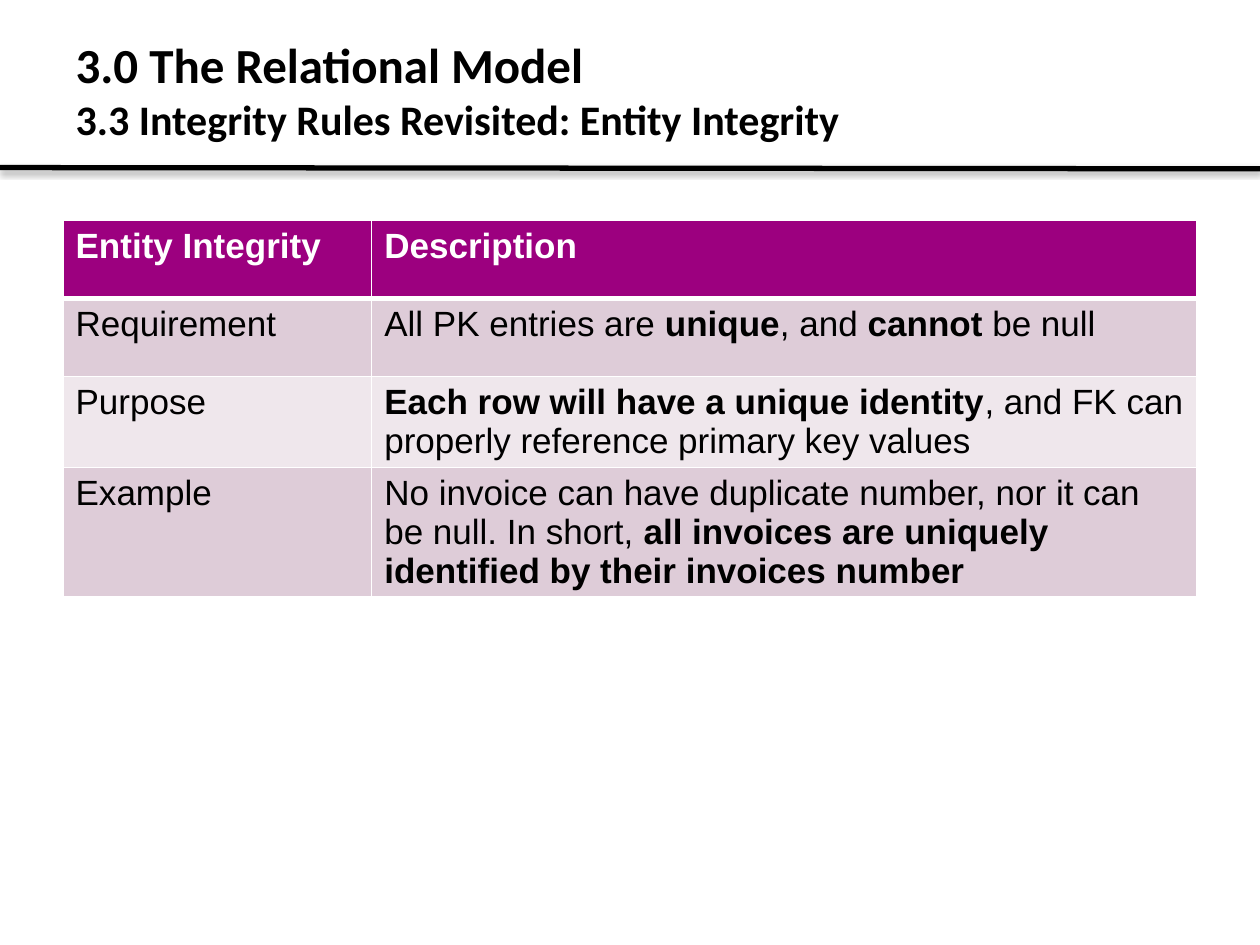
from lxml.etree import SubElement
from pptx import Presentation
from pptx.dml.color import RGBColor
from pptx.enum.shapes import MSO_CONNECTOR
from pptx.enum.text import MSO_ANCHOR, PP_ALIGN
from pptx.oxml.ns import qn
from pptx.util import Inches, Pt

BLACK = RGBColor(0x00, 0x00, 0x00)
WHITE = RGBColor(0xFF, 0xFF, 0xFF)
PURPLE = RGBColor(0x9C, 0x00, 0x7F)
BAND_DARK = RGBColor(0xDE, 0xCC, 0xD8)
BAND_LIGHT = RGBColor(0xEF, 0xE7, 0xEC)

ROWS = [
    ("Entity Integrity", "Description"),
    ("Requirement", "All PK entries are **unique**, and **cannot** be null"),
    ("Purpose", "**Each row will have a unique identity**, and FK can "
                "properly reference primary key values"),
    ("Example", "No invoice can have duplicate number, nor it can be null. In short, "
                "**all invoices are uniquely identified by their invoices number**"),
]


def add_text(p, text, *, size, font, color=BLACK, bold=False):
    for i, part in enumerate(text.split("**")):
        if part:
            r = p.add_run()
            r.text = part
            r.font.size = Pt(size)
            r.font.name = font
            r.font.bold = bold or i % 2 == 1
            r.font.color.rgb = color


class SlideBuilder:
    title_font = "Calibri"
    body_font = "Arial"
    body_size = 20

    def __init__(self, prs):
        self.s = prs.slides.add_slide(prs.slide_layouts[5])

    def title(self, heading, subheading, left, top, width, height):
        sp = self.s.shapes.title
        sp.left, sp.top = Inches(left), Inches(top)
        sp.width, sp.height = Inches(width), Inches(height)
        tf = sp.text_frame
        tf.word_wrap = True
        tf.vertical_anchor = MSO_ANCHOR.MIDDLE
        p = tf.paragraphs[0]
        p.alignment = PP_ALIGN.LEFT
        add_text(p, heading, size=28, font=self.title_font, bold=True)
        p.add_line_break()
        add_text(p, subheading, size=24, font=self.title_font, bold=True)

    def rule(self, x1, y1, x2, y2):
        line = self.s.shapes.add_connector(
            MSO_CONNECTOR.STRAIGHT, Inches(x1), Inches(y1), Inches(x2), Inches(y2))
        line.line.color.rgb = BLACK
        line.line.width = Pt(3)
        effects = SubElement(line._element.spPr, qn("a:effectLst"))
        shadow = SubElement(effects, qn("a:outerShdw"), blurRad=str(Pt(3.1)),
                            dist=str(Pt(1.8)), dir="5400000", rotWithShape="0")
        color = SubElement(shadow, qn("a:srgbClr"), val=str(BLACK))
        SubElement(color, qn("a:alpha"), val="35000")

    def borders(self, cell, **widths):
        tcPr = cell._tc.get_or_add_tcPr()
        for side in "LRTB":
            ln = SubElement(tcPr, qn(f"a:ln{side}"), w=str(Pt(widths.get(side, 1))))
            fill = SubElement(ln, qn("a:solidFill"))
            SubElement(fill, qn("a:srgbClr"), val=str(WHITE))

    def table(self, rows, left, top, col_widths, row_height):
        table = self.s.shapes.add_table(
            len(rows), len(col_widths), Inches(left), Inches(top),
            Inches(sum(col_widths)), Inches(row_height * len(rows))).table
        for column, width in zip(table.columns, col_widths):
            column.width = Inches(width)
        for i, row in enumerate(rows):
            header = i == 0
            band = PURPLE if header else BAND_DARK if i % 2 else BAND_LIGHT
            for j, text in enumerate(row):
                cell = table.cell(i, j)
                self.borders(cell, T=3 if i == 1 else 1, B=3 if header else 1)
                cell.fill.solid()
                cell.fill.fore_color.rgb = band
                add_text(cell.text_frame.paragraphs[0], text, size=self.body_size,
                         font=self.body_font, color=WHITE if header else BLACK, bold=header)


def main():
    prs = Presentation()
    prs.slide_width, prs.slide_height = Inches(10), Inches(7.5)
    builder = SlideBuilder(prs)
    builder.rule(0, 1.33, 10, 1.34)
    builder.table(ROWS, 0.5, 1.75, (2.45, 6.55), 0.62)
    builder.title("3.0 The Relational Model",
                  "3.3 Integrity Rules Revisited: Entity Integrity", 0.5, 0.17, 9, 1.08)
    prs.save("out.pptx")


if __name__ == "__main__":
    main()
